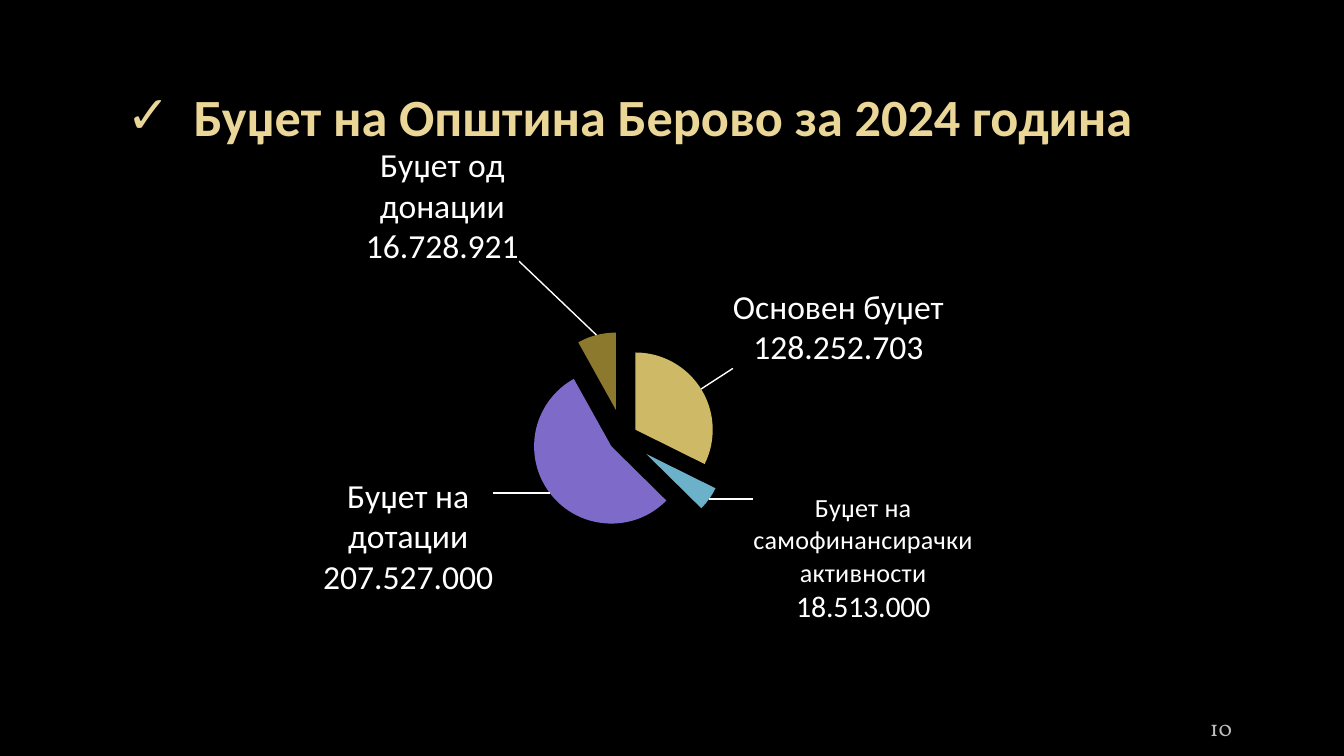
from dataclasses import dataclass

from lxml import etree
from pptx import Presentation
from pptx import util as u
from pptx.chart.data import CategoryChartData
from pptx.dml.color import RGBColor
from pptx.enum import chart as charts, text
from pptx.oxml import parse_xml
from pptx.oxml.ns import nsdecls, qn

WIDTH = u.Inches(10)
HEIGHT = u.Emu(WIDTH * 9 // 16)
COLORS = {
    "background": "000000", "title": "EAD696", "label": "FFFFFF", "number": "BDBDBD",
    "basic": "CEB966", "own": "6BB1C9", "grants": "7E6BC9", "donations": "8C792D",
}


@dataclass(frozen=True)
class Box:
    left: float
    top: float
    width: float
    height: float

    def place(self) -> tuple[int, int, int, int]:
        return (int(WIDTH * self.left), int(HEIGHT * self.top),
                int(WIDTH * self.width), int(HEIGHT * self.height))


@dataclass(frozen=True)
class Budget:
    category: str
    share: int
    color: str
    explosion: int
    lines: tuple[str, ...]
    sizes: tuple[int, int]
    shift: tuple[float, float]


TITLE = Box(0.084, 0.052, 0.916, 0.16)
CHART = Box(0.019, 0.192, 0.936, 0.73)
NUMBER = Box(0.867, 0.936, 0.083, 0.053)
PIE = Box(0.41, 0.39, 0.13, 0.28)

BUDGETS = (
    Budget("Основен буџет", 32, "basic", 19,
           ("Основен буџет", "128.252.703"), (18, 18), (0.02, -0.03)),
    Budget("Самофинансирачки активности", 5, "own", 37,
           ("Буџет на", "самофинансирачки", "активности", "18.513.000"), (14, 16), (0.03, -0.02)),
    Budget("Дотации", 54, "grants", 19,
           ("Буџет на", "дотации", "207.527.000"), (18, 18), (-0.04, -0.04)),
    Budget("Донации", 8, "donations", 37,
           ("Буџет од", "донации", "16.728.921"), (18, 18), (-0.06, -0.12)),
)


def rgb(name: str) -> RGBColor:
    return RGBColor.from_string(COLORS[name])


def set_all(target, values: dict) -> None:
    for key, value in values.items():
        setattr(target, key, value)


def style_font(font, size: int, color: str, name: str = "Calibri", bold: bool = False) -> None:
    set_all(font, {"size": u.Pt(size), "name": name, "bold": bold})
    font.color.rgb = rgb(color)


def style_frame(frame, anchor: text.MSO_ANCHOR) -> None:
    set_all(frame, {"word_wrap": True, "auto_size": text.MSO_AUTO_SIZE.NONE,
                    "vertical_anchor": anchor})
    set_all(frame, {f"margin_{side}": u.Inches(0.1)
                    for side in ("left", "top", "right", "bottom")})


def manual_layout(x: float, y: float, size: tuple[float, float] | None = None):
    layout = etree.Element(qn("c:layout"))
    manual = etree.SubElement(layout, qn("c:manualLayout"))
    values = {"x": x, "y": y}
    if size:
        values = {"layoutTarget": "inner", "xMode": "edge", "yMode": "edge",
                  **values, "w": size[0], "h": size[1]}
    for tag, value in values.items():
        etree.SubElement(manual, qn(f"c:{tag}"), val=str(value))
    return layout


def add_title(slide, words: str) -> None:
    title = slide.shapes.title
    set_all(title, dict(zip(("left", "top", "width", "height"), TITLE.place())))
    frame = title.text_frame
    style_frame(frame, text.MSO_ANCHOR.BOTTOM)
    line = frame.paragraphs[0]
    line.alignment = text.PP_ALIGN.LEFT
    run = line.add_run()
    run.text = words
    style_font(run.font, 28, "title", bold=True)
    props = line._p.get_or_add_pPr()
    for key, value in {"marL": 0.5, "indent": -0.5}.items():
        props.set(key, str(u.Inches(value)))
    etree.SubElement(props, qn("a:buFont"), typeface="Calibri")
    etree.SubElement(props, qn("a:buChar"), char="✓")


def add_number(slide, words: str) -> None:
    frame = slide.shapes.add_textbox(*NUMBER.place()).text_frame
    style_frame(frame, text.MSO_ANCHOR.MIDDLE)
    line = frame.paragraphs[0]
    line.alignment = text.PP_ALIGN.CENTER
    run = line.add_run()
    run.text = words
    style_font(run.font, 12, "number", "Vollkorn")


def style_budget(point, budget: Budget) -> None:
    point.format.fill.solid()
    point.format.fill.fore_color.rgb = rgb(budget.color)
    point.format.line.fill.background()
    explosion = etree.Element(qn("c:explosion"), val=str(budget.explosion))
    point.format._element.find(qn("c:spPr")).addprevious(explosion)

    label = point.data_label
    frame = label.text_frame
    for row, words in enumerate(budget.lines):
        line = frame.paragraphs[0] if row == 0 else frame.add_paragraph()
        run = line.add_run()
        run.text = words
        style_font(run.font, budget.sizes[row == len(budget.lines) - 1], "label")
    label.position = charts.XL_LABEL_POSITION.OUTSIDE_END
    label._dLbl.find(qn("c:idx")).addnext(manual_layout(*budget.shift))


def add_budget_chart(slide) -> None:
    data = CategoryChartData()
    data.categories = [budget.category for budget in BUDGETS]
    data.add_series("Series 1", [budget.share for budget in BUDGETS])
    chart = slide.shapes.add_chart(charts.XL_CHART_TYPE.PIE, *CHART.place(), data).chart
    set_all(chart, {"has_legend": False, "has_title": False})
    style_font(chart.font, 10, "label", "Vollkorn")
    pie = chart.plots[0]
    pie.vary_by_categories = True
    series = pie.series[0]
    labels = series.data_labels
    set_all(labels, {"show_category_name": True, "show_percentage": True, "show_value": False,
                     "position": charts.XL_LABEL_POSITION.OUTSIDE_END})
    style_font(labels.font, 18, "label", "Vollkorn", bold=True)
    for index, budget in enumerate(BUDGETS):
        style_budget(series.points[index], budget)

    options = labels._element
    for old in options.findall(qn("c:showLeaderLines")):
        options.remove(old)
    etree.SubElement(options, qn("c:showLeaderLines"), val="1")
    options.append(parse_xml(
        f'<c:leaderLines {nsdecls("c", "a")}><c:spPr><a:ln w="9525"><a:solidFill>'
        f'<a:srgbClr val="{COLORS["label"]}"/></a:solidFill></a:ln></c:spPr></c:leaderLines>'))
    area = chart._chartSpace.chart.plotArea
    for old in area.findall(qn("c:layout")):
        area.remove(old)
    area.insert(0, manual_layout(PIE.left, PIE.top, (PIE.width, PIE.height)))


def main() -> None:
    deck = Presentation()
    set_all(deck, {"slide_width": WIDTH, "slide_height": HEIGHT})
    slide = deck.slides.add_slide(deck.slide_layouts[5])
    slide.background.fill.solid()
    slide.background.fill.fore_color.rgb = rgb("background")
    add_number(slide, "10")
    add_title(slide, "Буџет на Општина Берово за 2024 година")
    add_budget_chart(slide)
    deck.save("out.pptx")


if __name__ == "__main__":
    main()
